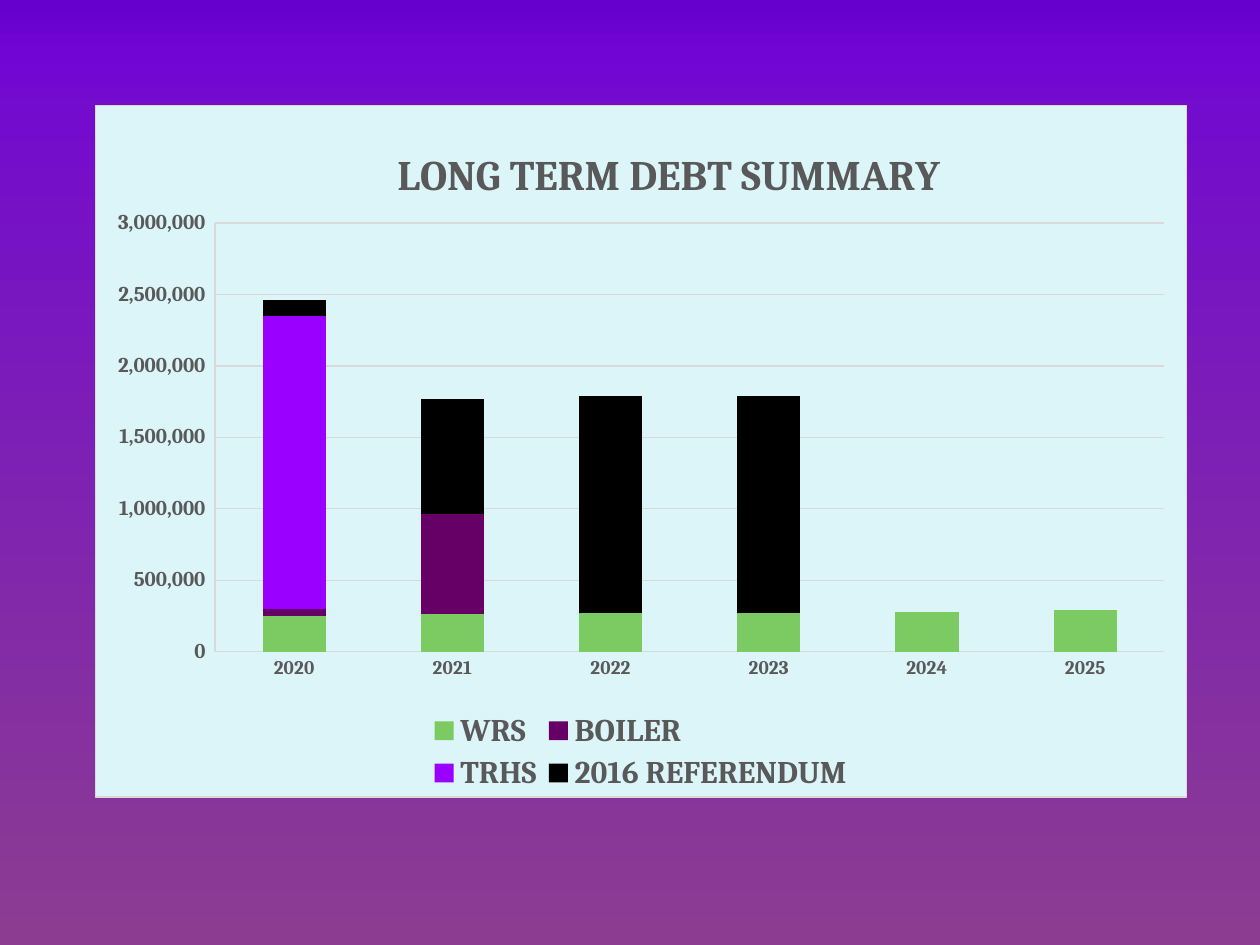
from lxml import etree
from pptx import Presentation
from pptx.chart.data import CategoryChartData
from pptx.dml.color import RGBColor
from pptx.enum import chart as ch
from pptx.oxml import parse_xml
from pptx.oxml.ns import nsdecls, qn
from pptx.util import Inches, Pt

FONT, GREY, RULE, PANEL = "Cambria", "595959", "D9D9D9", "DBF5F9"
BACKDROP = [(0, "6600CC"), (6, "7005D4"), (12, "730CCC"), (100, "8C3D91")]
YEARS = ["2020", "2021", "2022", "2023", "2024", "2025"]
DEBTS = [
    ("WRS", "7CCA62", [250000, 260000, 270000, 270000, 280000, 290000]),
    ("BOILER", "660066", [50000, 700000, None, None, None, None]),
    ("TRHS", "9900FF", [2050000, None, None, None, None, None]),
    ("2016 REFERENDUM", "000000", [110000, 810000, 1520000, 1520000, None, None]),
]


def color(hex_code):
    return RGBColor.from_string(hex_code)


def style_font(font, size, hex_code=GREY, bold=True):
    font.name, font.size, font.bold = FONT, Pt(size), bold
    font.color.rgb = color(hex_code)


def style_line(line):
    line.color.rgb = color(RULE)
    line.width = Pt(0.75)


def place(part, after=None, inner=False, **shares):
    """Lay out a chart part by shares (x, y, w, h) of the chart's size."""
    for old in part.findall(qn("c:layout")):
        part.remove(old)
    layout = etree.Element(qn("c:layout"))
    manual = etree.SubElement(layout, qn("c:manualLayout"))
    settings = {"layoutTarget": "inner"} if inner else {}
    settings.update(xMode="edge", yMode="edge", **shares)
    for tag, value in settings.items():
        etree.SubElement(manual, qn("c:" + tag)).set("val", str(value))
    if after:
        part.find(qn(after)).addnext(layout)
    else:
        part.insert(0, layout)


class DebtSlide:
    def __init__(self, prs):
        self.width, self.height = prs.slide_width, prs.slide_height
        self.slide = prs.slides.add_slide(prs.slide_layouts[6])

    def background(self, stops):
        fill = self.slide.background.fill
        fill.gradient()
        fill.gradient_angle = 270
        stop_list = next(self.slide.element.iter(qn("a:gsLst")))
        for old in list(stop_list):
            stop_list.remove(old)
        for percent, hex_code in stops:
            stop = etree.SubElement(stop_list, qn("a:gs"), pos=str(percent * 1000))
            etree.SubElement(stop, qn("a:srgbClr"), val=hex_code)

    def stacked_chart(self, x, y, w, h, categories, rows):
        data = CategoryChartData(number_format="#,##0")
        data.categories = categories
        for name, _, values in rows:
            data.add_series(name, values)
        chart = self.slide.shapes.add_chart(
            ch.XL_CHART_TYPE.COLUMN_STACKED, int(x * self.width), int(y * self.height),
            int(w * self.width), int(h * self.height), data).chart
        style_font(chart.font, 10, "000000", bold=False)
        plot = chart.plots[0]
        plot.gap_width, plot.overlap, plot.vary_by_categories = 150, 100, False
        for series, (_, hex_code, _) in zip(plot.series, rows):
            series.format.fill.solid()
            series.format.fill.fore_color.rgb = color(hex_code)
            series.invert_if_negative = False
        return chart

    def chart_panel(self, chart):
        chart.element.find(qn("c:chart")).addnext(parse_xml(
            f'<c:spPr {nsdecls("c", "a")}>'
            f'<a:solidFill><a:srgbClr val="{PANEL}"/></a:solidFill>'
            f'<a:ln w="{Pt(0.75)}"><a:solidFill><a:srgbClr val="{RULE}"/></a:solidFill></a:ln>'
            '</c:spPr>'))
        plot_area = next(chart.element.iter(qn("c:plotArea")))
        place(plot_area, inner=True, x=0.11, y=0.17, w=0.87, h=0.62)

    def chart_title(self, chart, words):
        frame = chart.chart_title.text_frame
        frame.text = words
        style_font(frame.paragraphs[0].runs[0].font, 24)
        chart.chart_title.include_in_layout = False
        place(next(chart.element.iter(qn("c:title"))), after="c:tx", x=0.27, y=0.05)

    def chart_axes(self, chart, top, step):
        for axis, size in ((chart.category_axis, 11), (chart.value_axis, 12)):
            axis.major_tick_mark = axis.minor_tick_mark = ch.XL_TICK_MARK.NONE
            style_font(axis.tick_labels.font, size)
            style_line(axis.format.line)
        amounts = chart.value_axis
        amounts.minimum_scale, amounts.maximum_scale, amounts.major_unit = 0, top, step
        amounts.has_major_gridlines = True
        style_line(amounts.major_gridlines.format.line)
        amounts.tick_labels.number_format = r"#,##0_);\(#,##0\)"
        amounts.tick_labels.number_format_is_linked = False

    def chart_legend(self, chart):
        chart.has_legend = True
        legend = chart.legend
        legend.position = ch.XL_LEGEND_POSITION.BOTTOM
        legend.include_in_layout = False
        style_font(legend.font, 18)
        place(next(chart.element.iter(qn("c:legend"))), after="c:legendPos",
              x=0.3, y=0.87, w=0.4, h=0.13)


def main():
    prs = Presentation()
    prs.slide_width, prs.slide_height = Inches(10), Inches(7.5)
    page = DebtSlide(prs)
    page.background(BACKDROP)

    # Debt by year, stacked by obligation
    debt = page.stacked_chart(0.075, 0.111, 0.867, 0.733, YEARS, DEBTS)
    page.chart_panel(debt)
    page.chart_title(debt, "LONG TERM DEBT SUMMARY")
    page.chart_axes(debt, top=3000000, step=500000)
    page.chart_legend(debt)

    prs.save("out.pptx")


if __name__ == "__main__":
    main()
